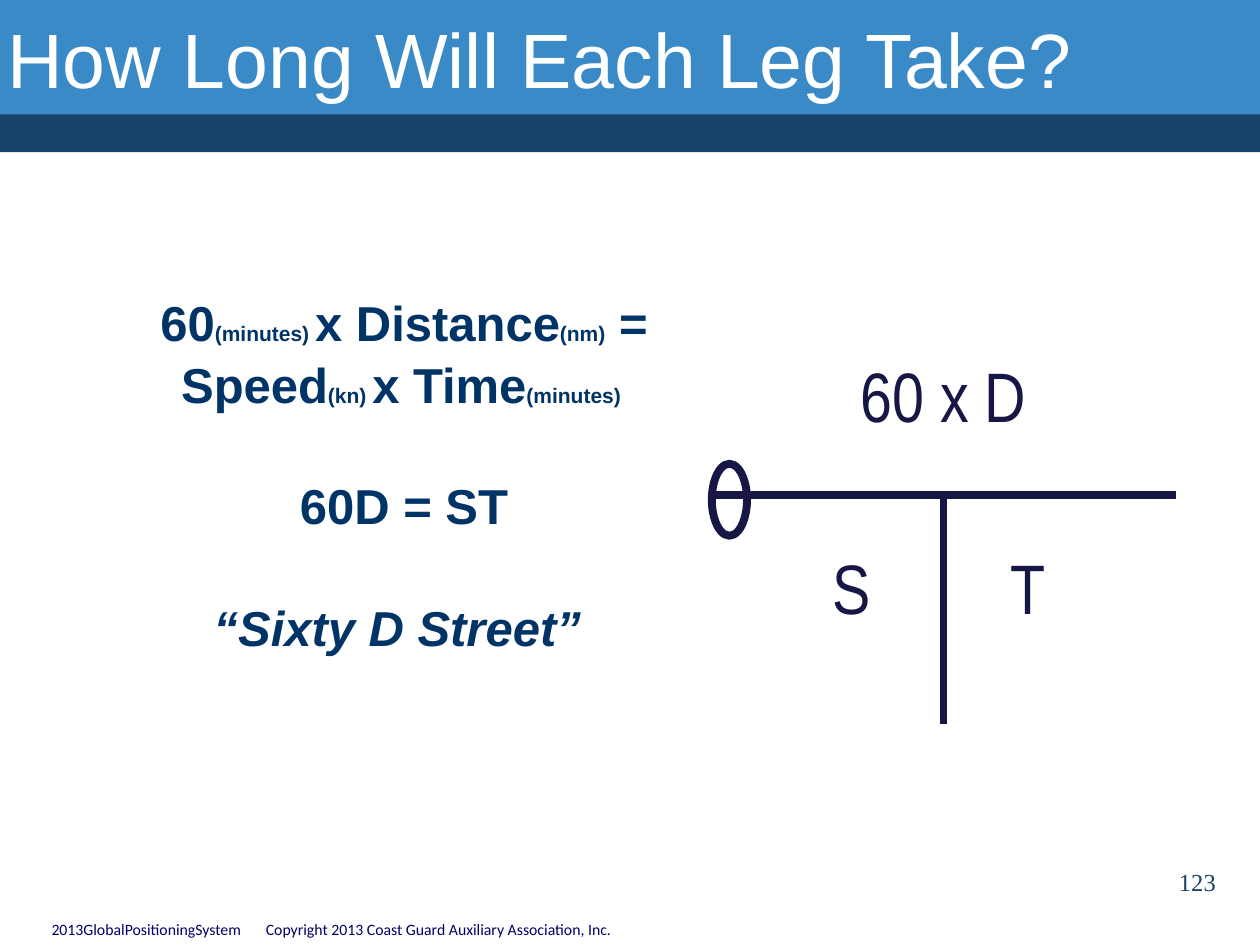
import dataclasses
import typing

import lxml.etree
import pptx
import pptx.dml.color
import pptx.enum.shapes
import pptx.enum.text
import pptx.oxml.ns
import pptx.util

Cm = pptx.util.Cm
Pt = pptx.util.Pt
Align = pptx.enum.text.PP_ALIGN
Kind = pptx.enum.shapes.MSO_SHAPE
qn = pptx.oxml.ns.qn
INK, NAVY, DEEP, SKY = "171745", "003366", "19426B", "398AC7"


@dataclasses.dataclass
class Box:
    left: float
    top: float
    width: float
    height: float


@dataclasses.dataclass
class Style:
    face: str
    size: float
    hue: str
    align: typing.Any = Align.CENTER
    bold: bool = False
    wrap: bool = True


@dataclasses.dataclass
class Label:
    text: str
    box: Box
    style: Style


def color(code: str) -> pptx.dml.color.RGBColor:
    """Turn a hex string into a colour."""
    return pptx.dml.color.RGBColor.from_string(code)


def place(box: Box) -> list:
    """Give the position and size of a box as lengths."""
    return [Cm(n) for n in dataclasses.astuple(box)]


def set_font(para, style: Style) -> None:
    """Apply a text style to a paragraph."""
    para.alignment = style.align
    font = para.font
    font.name, font.size, font.bold = style.face, Pt(style.size), style.bold
    font.color.rgb = color(style.hue)


def add_label(slide, label: Label):
    """Add a one-paragraph text box and return its frame."""
    frame = slide.shapes.add_textbox(*place(label.box)).text_frame
    frame.word_wrap = label.style.wrap
    para = frame.paragraphs[0]
    para.add_run().text = label.text
    set_font(para, label.style)
    return frame


def add_bar(slide, box: Box, hue: str) -> None:
    """Add a plain filled rectangle."""
    bar = slide.shapes.add_shape(Kind.RECTANGLE, *place(box))
    bar.shadow.inherit = False
    bar.fill.solid()
    bar.fill.fore_color.rgb = color(hue)
    bar.line.fill.background()


def ink(line) -> None:
    """Give a line the diagram's stroke."""
    line.color.rgb = color(INK)
    line.width = Pt(4.5)


def add_line(slide, ends: tuple) -> None:
    """Add a straight diagram line."""
    kind = pptx.enum.shapes.MSO_CONNECTOR.STRAIGHT
    line = slide.shapes.add_connector(kind, *[Cm(n) for n in ends])
    ink(line.line)
    lxml.etree.SubElement(line._element.spPr, qn("a:effectLst"))


def add_ring(slide, box: Box) -> None:
    """Add the open ellipse at the end of the bar."""
    ring = slide.shapes.add_shape(Kind.OVAL, *place(box))
    ring.shadow.inherit = False
    ring.fill.background()
    ink(ring.line)


def add_title(slide) -> None:
    """Add the slide title."""
    style = Style("Arial", 44, "FFFFFF", Align.LEFT)
    box = Box(0.05, 0, 22.23, 2.34)
    frame = add_label(slide, Label("How Long Will Each Leg Take?", box, style))
    frame.vertical_anchor = pptx.enum.text.MSO_ANCHOR.MIDDLE
    frame.margin_left = frame.margin_right = Cm(0.1)
    frame.margin_top = frame.margin_bottom = Cm(0.1)


def add_rule(slide) -> None:
    """Add the formula, its short form and its memory aid."""
    big, small = 28, 12
    style = Style("Arial", big, NAVY, bold=True)
    lines = [
        [("60", big), ("(minutes) ", small), ("x Distance", big),
         ("(nm)", small), (" = Speed", big), ("(kn) ", small),
         ("x Time", big), ("(minutes) ", small)],
        [("60D = ST", big)],
        [("“Sixty D Street” ", big)],
    ]
    box = Box(2.11, 5.72, 12.07, 9.73)
    frame = slide.shapes.add_textbox(*place(box)).text_frame
    frame.word_wrap = True
    for i, parts in enumerate(lines):
        para = frame.add_paragraph() if i else frame.paragraphs[0]
        para.line_spacing = 1.05
        if i:
            para.space_before = Pt(34)
        for text, size in parts:
            run = para.add_run()
            run.text = text
            if size != big:
                run.font.size = Pt(size)
        set_font(para, style)
    para.font.italic = True


def add_footer(slide) -> None:
    """Add the course name and copyright line, parted by a tab."""
    box = Box(0.79, 18.42, 13.56, 0.64)
    frame = slide.shapes.add_textbox(*place(box)).text_frame
    frame.word_wrap = False
    para = frame.paragraphs[0]
    para.add_run().text = (
        "2013GlobalPositioningSystem\t"
        "Copyright 2013 Coast Guard Auxiliary Association, Inc."
    )
    tabs = lxml.etree.SubElement(para._p.get_or_add_pPr(), qn("a:tabLst"))
    lxml.etree.SubElement(tabs, qn("a:tab"), pos=str(Cm(4.32)), algn="l")
    set_font(para, Style("Calibri", 9, "000066", Align.LEFT))


def main() -> None:
    """Build and save the slide."""
    deck = pptx.Presentation()
    deck.slide_width, deck.slide_height = Cm(25.4), Cm(19.05)
    slide = deck.slides.add_slide(deck.slide_layouts[6])
    add_bar(slide, Box(0, 2.21, 25.4, 0.86), DEEP)
    add_bar(slide, Box(0, 0, 25.4, 2.31), SKY)
    add_footer(slide)
    add_title(slide)
    add_rule(slide)
    tall = Style("Arial Narrow", 40, INK, wrap=False)
    page = Style("Times New Roman", 14, DEEP, Align.RIGHT)
    for label in (
        Label("60 x D", Box(17.04, 6.99, 3.96, 1.96), tall),
        Label("S", Box(16.54, 10.85, 1.24, 1.96), tall),
        Label("T", Box(20.12, 10.85, 1.17, 1.96), tall),
        Label("123", Box(19.48, 17.35, 5.28, 1.27), page),
    ):
        add_label(slide, label)
    add_ring(slide, Box(14.35, 9.35, 0.71, 1.45))
    add_line(slide, (14.4, 9.98, 23.7, 9.98))
    add_line(slide, (19.02, 9.93, 19.02, 14.6))
    deck.save("out.pptx")


if __name__ == "__main__":
    main()
